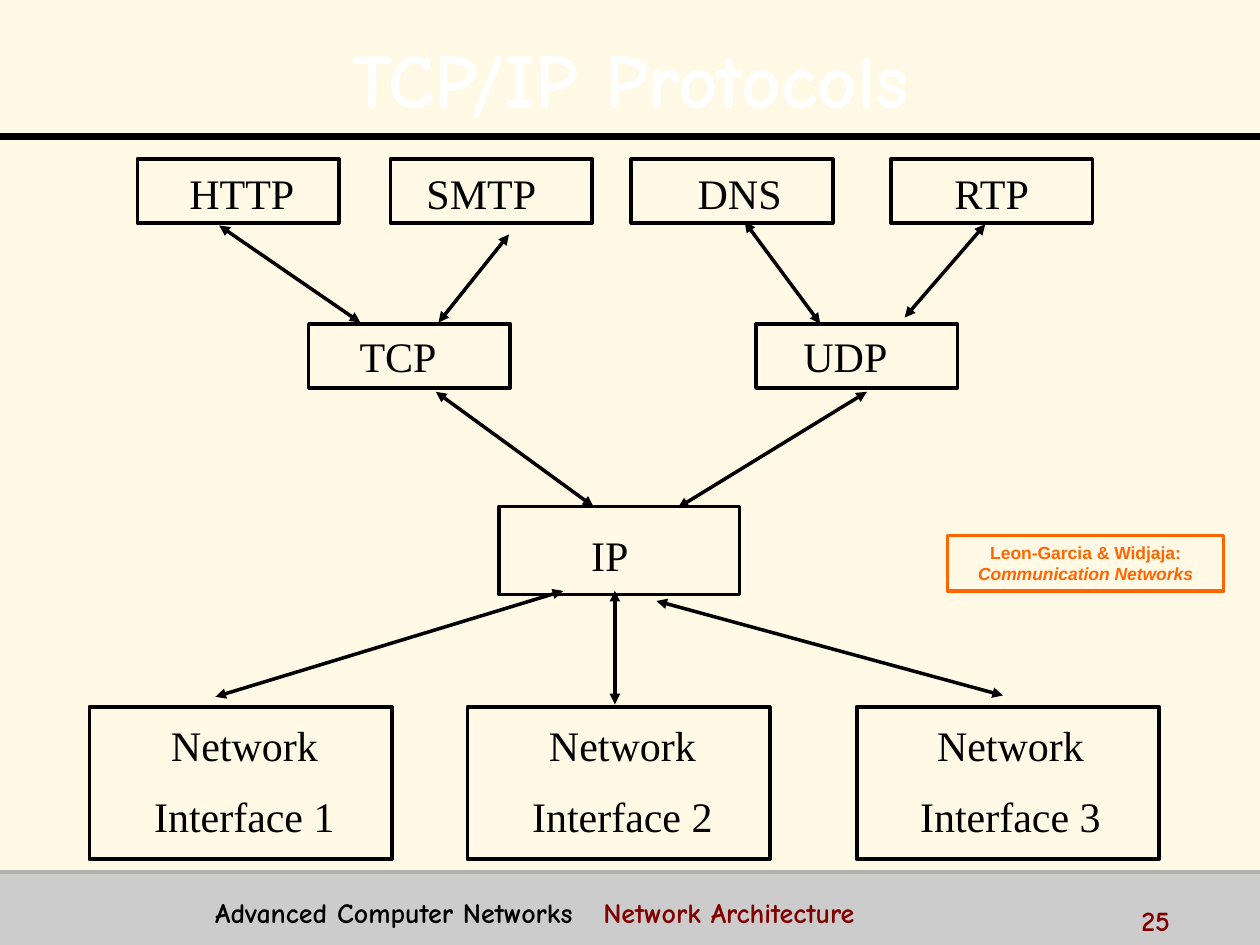
from lxml.etree import SubElement
from pptx import Presentation
from pptx.dml.color import RGBColor
from pptx.enum.shapes import MSO_CONNECTOR as Connector, MSO_SHAPE as Shape
from pptx.enum.text import MSO_ANCHOR as Anchor, MSO_AUTO_SIZE as AutoSize, PP_ALIGN as Align
from pptx.oxml.ns import qn
from pptx.util import Inches, Pt

CREAM = RGBColor(0xFF, 0xF9, 0xE6)
WHITE = RGBColor(0xFF, 0xFF, 0xFF)
BLACK = RGBColor(0, 0, 0)
FOOTER_GRAY = RGBColor(0xCC, 0xCC, 0xCC)
RULE_GRAY = RGBColor(0xB2, 0xB2, 0xB2)
ORANGE = RGBColor(0xFF, 0x66, 0x00)
MAROON = RGBColor(0x80, 0, 0)
COMIC, SERIF, SANS = "Comic Neue", "Times New Roman", "Arial"

WIDTH, HEIGHT = 10, 7.5
HEADER_RULE, FOOTER_TOP = 1.08, 6.92

TITLE = "TCP/IP Protocols"
FOOTER = [("Advanced Computer Networks", BLACK), ("\tNetwork Architecture", MAROON)]
PAGE_NUMBER = "25"
CITATION = [("Leon-Garcia & Widjaja:", False), ("Communication Networks", True)]

LAYERS = [
    {"top": 1.26, "size": (1.6, 0.51), "label_top": 1.28, "label_size": (1.15, 0.5),
     "nodes": [(["HTTP"], 1.09, 1.92), (["SMTP"], 3.1, 3.82),
               (["DNS"], 5.01, 5.87), (["RTP"], 7.07, 7.87)]},
    {"top": 2.57, "size": (1.6, 0.51), "label_top": 2.57, "label_size": (1, 0.5),
     "nodes": [(["TCP"], 2.45, 3.16), (["UDP"], 6, 6.71)]},
    {"top": 4.02, "size": (1.91, 0.7), "label_top": 4.15, "label_size": (0.6, 0.5),
     "nodes": [(["IP"], 3.96, 4.84)]},
    {"top": 5.61, "size": (2.4, 1.21), "label_top": 5.64, "label_size": (1.94, 1.1),
     "nodes": [(["Network", "Interface 1"], 0.71, 1.94),
               (["Network", "Interface 2"], 3.71, 4.94),
               (["Network", "Interface 3"], 6.8, 8.02)]},
]

ARROWS = [
    ((1.74, 1.79), (2.86, 2.56)), ((3.48, 2.56), (4.04, 1.86)),
    ((6.51, 2.57), (5.91, 1.76)), ((7.18, 2.52), (7.82, 1.78)),
    ((4.71, 4.02), (3.46, 3.11)), ((5.38, 4.03), (6.88, 3.11)),
    ((1.71, 5.53), (4.47, 4.69)), ((4.88, 5.59), (4.88, 4.69)),
    ((7.96, 5.52), (5.21, 4.77)),
]


def inches(*values):
    return [Inches(value) for value in values]


def add_run(paragraph, text, font, size, color, bold=False, italic=None):
    run = paragraph.add_run()
    run.text = text
    run.font.name, run.font.size = font, Pt(size)
    run.font.bold, run.font.italic = bold, italic
    run.font.color.rgb = color


def next_paragraph(frame, index):
    return frame.add_paragraph() if index else frame.paragraphs[0]


def add_rectangle(slide, left, top, width, height, fill=None, line=None):
    shape = slide.shapes.add_shape(Shape.RECTANGLE, *inches(left, top, width, height))
    shape.shadow.inherit = False
    if fill is None:
        shape.fill.background()
    else:
        shape.fill.solid()
        shape.fill.fore_color.rgb = fill
    if line is None:
        shape.line.fill.background()
    else:
        shape.line.color.rgb, shape.line.width = line, Pt(2)
    return shape


def add_line(slide, start, end, color=BLACK, width=2, arrows=False):
    line = slide.shapes.add_connector(Connector.STRAIGHT, *inches(*start, *end))
    line.line.color.rgb, line.line.width = color, Pt(width)
    SubElement(line._element.spPr, qn("a:effectLst"))
    if arrows:
        outline = line.line._get_or_add_ln()
        for end_name in ("a:headEnd", "a:tailEnd"):
            SubElement(outline, qn(end_name), type="triangle")


def add_textbox(slide, left, top, width, height, wrap=True):
    frame = slide.shapes.add_textbox(*inches(left, top, width, height)).text_frame
    frame.word_wrap = wrap
    return frame


def add_node(slide, layer, lines, left, label_center):
    add_rectangle(slide, left, layer["top"], *layer["size"], line=BLACK)
    width, height = layer["label_size"]
    frame = add_textbox(slide, label_center - width / 2, layer["label_top"],
                        width, height, wrap=False)
    frame.vertical_anchor = Anchor.MIDDLE
    for index, text in enumerate(lines):
        paragraph = next_paragraph(frame, index)
        paragraph.alignment = Align.CENTER
        if index:
            paragraph.space_before = Pt(12)
        add_run(paragraph, text, SERIF, 24, BLACK)


def add_title(slide):
    title = slide.shapes.title
    title.left, title.top, title.width, title.height = inches(0.2, 0.13, 9.61, 0.87)
    frame = title.text_frame
    frame.auto_size, frame.vertical_anchor = AutoSize.NONE, Anchor.TOP
    paragraph = frame.paragraphs[0]
    paragraph.alignment, paragraph.line_spacing = Align.CENTER, 1.1
    add_run(paragraph, TITLE, COMIC, 44, WHITE, bold=True)


def add_citation(slide):
    frame = add_rectangle(slide, 7.52, 4.25, 2.19, 0.44, line=ORANGE).text_frame
    frame.word_wrap, frame.vertical_anchor = True, Anchor.MIDDLE
    for index, (text, italic) in enumerate(CITATION):
        paragraph = next_paragraph(frame, index)
        paragraph.alignment = Align.CENTER
        add_run(paragraph, text, SANS, 10, ORANGE, bold=True, italic=italic)


def add_footer(slide):
    frame = add_textbox(slide, 1.61, 7.06, 7.2, 0.31)
    paragraph = frame.paragraphs[0]
    tabs = SubElement(paragraph._p.get_or_add_pPr(), qn("a:tabLst"))
    SubElement(tabs, qn("a:tab"), pos=str(Inches(3.08)), algn="l")
    for text, color in FOOTER:
        add_run(paragraph, text, COMIC, 16, color, bold=True)
    number = add_textbox(slide, 8.96, 7.12, 1, 0.25)
    add_run(number.paragraphs[0], PAGE_NUMBER, COMIC, 16, MAROON, bold=True)


def main():
    """Build the slide of TCP/IP protocol layers."""
    presentation = Presentation()
    presentation.slide_width, presentation.slide_height = inches(WIDTH, HEIGHT)
    slide = presentation.slides.add_slide(presentation.slide_layouts[5])
    slide.background.fill.solid()
    slide.background.fill.fore_color.rgb = CREAM
    add_rectangle(slide, 0, FOOTER_TOP, WIDTH, HEIGHT - FOOTER_TOP, fill=FOOTER_GRAY)
    add_line(slide, (0, HEADER_RULE), (WIDTH, HEADER_RULE), width=4)
    add_line(slide, (0, FOOTER_TOP), (WIDTH, FOOTER_TOP), RULE_GRAY)
    add_title(slide)
    for layer in LAYERS:
        for node in layer["nodes"]:
            add_node(slide, layer, *node)
    for start, end in ARROWS:
        add_line(slide, start, end, arrows=True)
    add_citation(slide)
    add_footer(slide)
    presentation.save("out.pptx")


if __name__ == "__main__":
    main()
